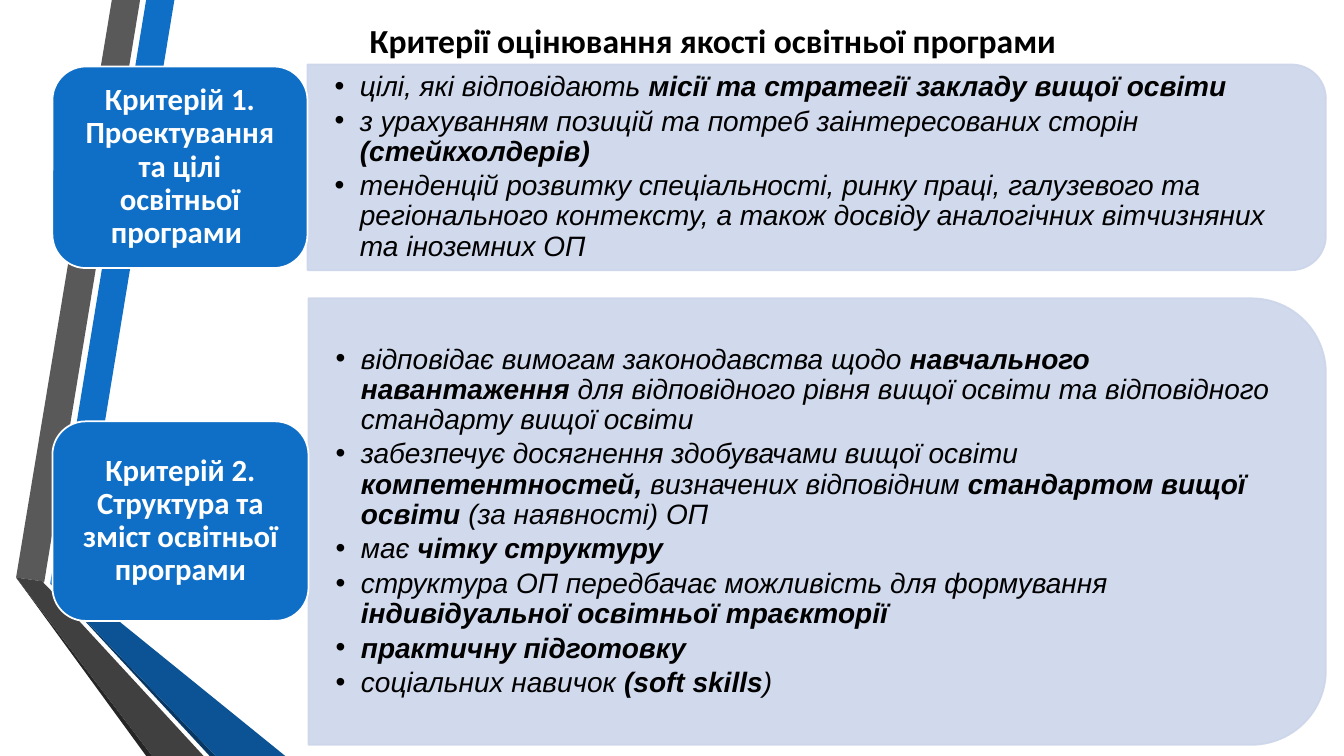
from lxml.etree import SubElement
from pptx import Presentation
from pptx.dml.color import RGBColor
from pptx.enum.shapes import MSO_SHAPE
from pptx.enum.text import MSO_ANCHOR, PP_ALIGN
from pptx.oxml.ns import qn
from pptx.util import Pt

SCALE = 9144


def px(n):
    return int(n * SCALE)


def rgb(code):
    return RGBColor.from_string(code)


class Deck:
    blue, pale, white, black = "0F6FC6", "CCD5EA", "FFFFFF", "000000"
    head, body = "Calibri", "Arial"

    def __init__(self):
        self.prs = Presentation()
        self.prs.slide_width, self.prs.slide_height = px(1333), px(750)
        self.slide = self.prs.slides.add_slide(self.prs.slide_layouts[5])
        self.shapes = self.slide.shapes

    def paint(self, shape, fill, line=None):
        shape.shadow.inherit = False
        shape.fill.solid()
        shape.fill.fore_color.rgb = rgb(fill)
        if line:
            shape.line.color.rgb = rgb(line)
            shape.line.width = Pt(1.25)
        else:
            shape.line.fill.background()

    def style(self, run, font, size, color, bold=False, italic=False):
        run.font.name, run.font.size = font, Pt(size)
        run.font.color.rgb = rgb(color)
        run.font.bold, run.font.italic = bold, italic

    def frame(self, shape, side, end):
        text = shape.text_frame
        text.word_wrap = True
        text.vertical_anchor = MSO_ANCHOR.MIDDLE
        text.margin_left = text.margin_right = px(side)
        text.margin_top = text.margin_bottom = px(end)
        return text

    def title(self, words, x, y, w, h):
        shape = self.shapes.title
        shape.left, shape.top, shape.width, shape.height = map(px, (x, y, w, h))
        text = self.frame(shape, 10, 5)
        text.text = words
        text.paragraphs[0].alignment = PP_ALIGN.CENTER
        self.style(text.paragraphs[0].runs[0], self.head, 24, self.black, True)

    def ribbon(self, color, points):
        build = self.shapes.build_freeform(*points[0], scale=SCALE)
        build.add_line_segments(points[1:])
        self.paint(build.convert_to_shape(), color)

    def panel(self, x, y, w, h):
        left, top = x + (w - h) / 2, y + (h - w) / 2
        shape = self.shapes.add_shape(
            MSO_SHAPE.ROUND_2_SAME_RECTANGLE, px(left), px(top), px(h), px(w))
        shape.rotation = 90
        self.paint(shape, self.pale, self.pale)
        for tint in shape._element.spPr.iter(qn("a:srgbClr")):
            SubElement(tint, qn("a:alpha"), val="90000")

    def card(self, words, x, y, w, h):
        shape = self.shapes.add_shape(
            MSO_SHAPE.ROUNDED_RECTANGLE, px(x), px(y), px(w), px(h))
        self.paint(shape, self.blue, self.white)
        text = self.frame(shape, 19, 15)
        text.text = words
        para = text.paragraphs[0]
        para.alignment, para.line_spacing = PP_ALIGN.CENTER, 0.9
        self.style(para.runs[0], self.head, 22, self.white, True)

    def points(self, items, x, y, w, h):
        text = self.frame(
            self.shapes.add_textbox(px(x), px(y), px(w), px(h)), 27, 14)
        for i, item in enumerate(items):
            para = text.add_paragraph() if i else text.paragraphs[0]
            para.line_spacing, para.space_after = 0.9, Pt(3)
            props = para._p.get_or_add_pPr()
            props.set("marL", str(px(25)))
            props.set("indent", str(px(-25)))
            SubElement(props, qn("a:buFont"), typeface=self.body)
            SubElement(props, qn("a:buChar"), char="•")
            for j, part in enumerate(item.split("*")):
                if part:
                    run = para.add_run()
                    run.text = part
                    self.style(run, self.body, 20, self.black, j % 2 == 1, True)


RIBBONS = [
    ("0F6FC6", [(50, 578), (77, 583), (173, 0), (145, 0)]),
    ("595959", [(139, 0), (111, 0), (16, 573), (44, 577)]),
    ("262626", [(16, 573), (145, 750), (151, 750)]),
    ("083763", [(50, 579), (208, 750), (214, 750)]),
    ("0B5394", [(50, 579), (214, 750), (283, 750), (77, 583), (50, 578)]),
    ("404040", [(202, 750), (48, 583), (43, 578), (44, 577), (16, 573),
                (151, 750)]),
]

GROUPS = [
    ("Критерій 1. Проектування та цілі освітньої програми ",
     (52, 66, 253, 200), (305, 64, 1010, 204), (305, 74, 1000, 184), [
         "цілі, які відповідають *місії та стратегії закладу вищої освіти*",
         "з урахуванням позицій та потреб заінтересованих сторін "
         "*(стейкхолдерів)*",
         "тенденцій розвитку спеціальності, ринку праці, галузевого та "
         "регіонального контексту, а також досвіду аналогічних вітчизняних "
         "та іноземних ОП"]),
    ("Критерій 2. Структура та зміст освітньої програми",
     (52, 418, 254, 198), (306, 296, 1009, 443), (306, 318, 987, 399), [
         "відповідає вимогам законодавства щодо *навчального навантаження *"
         "для відповідного рівня вищої освіти та відповідного стандарту "
         "вищої освіти",
         "забезпечує досягнення здобувачами вищої освіти *компетентностей, *"
         "визначених відповідним *стандартом вищої освіти* "
         "(за наявності) ОП",
         "має* чітку структуру*",
         "структура ОП передбачає можливість для формування"
         "* індивідуальної освітньої траєкторії*",
         "*практичну підготовку*",
         "соціальних навичок *(soft skills*)"]),
]


def main():
    deck = Deck()
    for color, points in RIBBONS:
        deck.ribbon(color, points)
    deck.title("Критерії оцінювання якості освітньої програми ",
               136, 0, 1150, 79)
    for words, card, panel, box, items in GROUPS:
        deck.panel(*panel)
        deck.points(items, *box)
        deck.card(words, *card)
    deck.prs.save("out.pptx")


if __name__ == "__main__":
    main()
